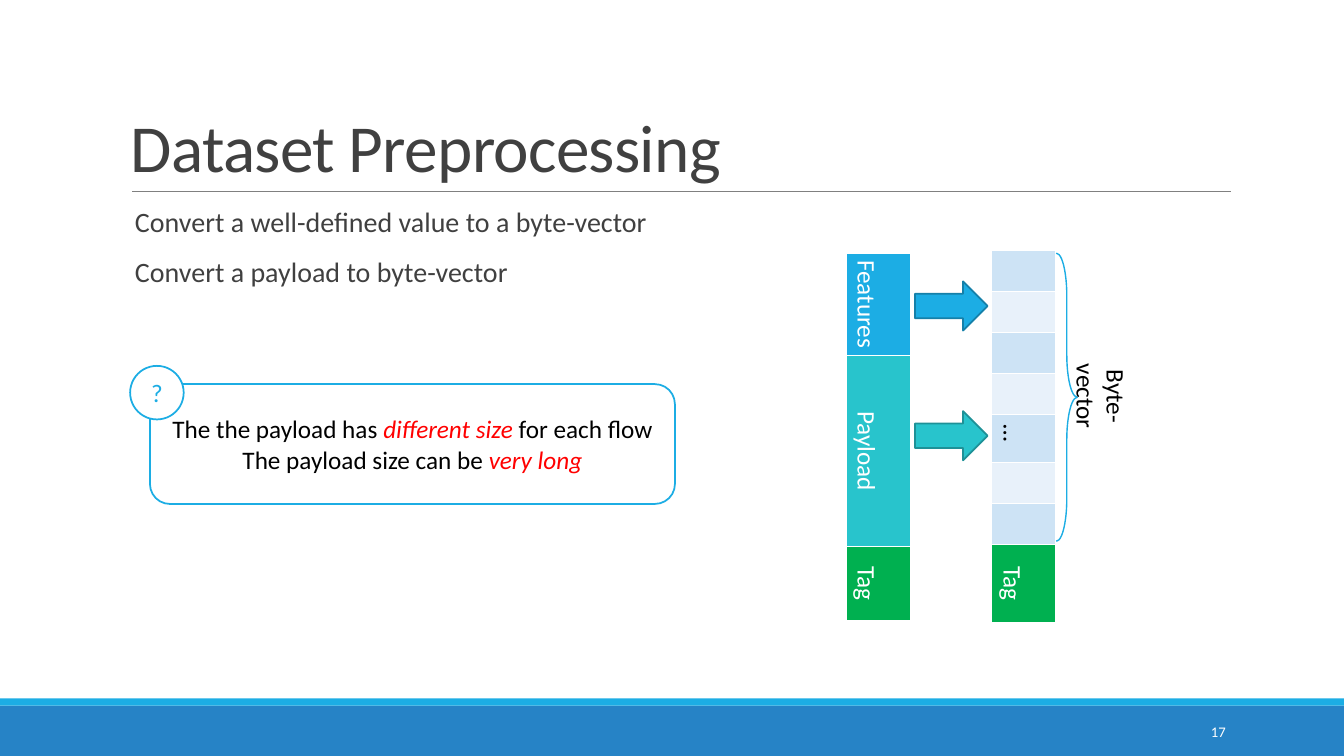
from dataclasses import dataclass
from lxml import etree
from pptx import Presentation
from pptx.dml.color import RGBColor
from pptx.enum.shapes import MSO_CONNECTOR as Connector, MSO_SHAPE as Preset
from pptx.enum.text import MSO_ANCHOR as Anchor, MSO_AUTO_SIZE as AutoSize, PP_ALIGN as Align
from pptx.oxml.ns import qn
from pptx.util import Cm, Pt


@dataclass(frozen=True)
class Theme:
    font: str = "Calibri"
    white: str = "FFFFFF"
    black: str = "000000"
    ink: str = "404040"
    grey: str = "808080"
    red: str = "FF0000"
    blue: str = "1CADE4"
    blue_edge: str = "1580A9"
    navy: str = "2683C6"
    teal: str = "28C4CC"
    teal_edge: str = "1E9197"
    green: str = "00B050"
    bands: tuple = ("CDE3F5", "E8F1FA")
    title_size: float = 48
    body_size: float = 20
    label_size: float = 18
    number_size: float = 10.5


THEME = Theme()

# Content; lengths in centimetres
TITLE = "Dataset Preprocessing"
POINTS = ["Convert a well-defined value to a byte-vector",
          "Convert a payload to byte-vector"]
RED_ITALIC = {"color": THEME.red, "italic": True}
CALLOUT = [
    [("The the payload has ", {}), ("different size", RED_ITALIC), (" for each flow", {})],
    [("The payload size can be ", {}), ("very long", RED_ITALIC)],
]
RECORD = [("Features", 2.57, THEME.blue), ("Payload", 4.83, THEME.teal), ("Tag", 1.85, THEME.green)]
VECTOR_BYTES = ["", "", "", "", "…", "", ""]
BYTE_HEIGHT, DOTS_HEIGHT, TAG_HEIGHT = 1.03, 1.22, 1.96
ARROWS = [(10.36, THEME.teal, THEME.teal_edge), (7.09, THEME.blue, THEME.blue_edge)]
SLIDE_WIDTH, SLIDE_HEIGHT = 33.87, 19.05
COLUMN_WIDTH = 1.6


def rgb(color):
    return RGBColor.from_string(color)


def write_text(frame, paragraphs, size=THEME.label_size, color=THEME.black, align=Align.LEFT,
               anchor=Anchor.MIDDLE, line_spacing=None, before=None, after=None,
               margins=None, vertical=False, tracking=None, hanging=None):
    """Fill a text frame; a paragraph is a string or a list of (text, format) runs."""
    frame.word_wrap = True
    frame.vertical_anchor = anchor
    if margins:
        frame.margin_left, frame.margin_top, frame.margin_right, frame.margin_bottom = map(Cm, margins)
    if vertical:
        frame._txBody.bodyPr.set("vert", "vert")
    for index, content in enumerate(paragraphs):
        paragraph = frame.add_paragraph() if index else frame.paragraphs[0]
        paragraph.alignment = align
        if line_spacing:
            paragraph.line_spacing = line_spacing
        if before is not None:
            paragraph.space_before, paragraph.space_after = Pt(before), Pt(after)
        if hanging:
            properties = paragraph._p.get_or_add_pPr()
            properties.set("marL", str(Cm(hanging)))
            properties.set("indent", str(-Cm(hanging)))
            bullet_color = etree.SubElement(properties, qn("a:buClr"))
            etree.SubElement(bullet_color, qn("a:srgbClr"), val=THEME.blue)
            etree.SubElement(properties, qn("a:buChar"), char=" ")
        for text, style in [(content, {})] if isinstance(content, str) else content:
            run = paragraph.add_run()
            run.text = text
            run.font.name = THEME.font
            run.font.size = Pt(size)
            run.font.italic = style.get("italic", False)
            run.font.color.rgb = rgb(style.get("color", color))
            if tracking:
                run._r.get_or_add_rPr().set("spc", str(int(tracking * 100)))


def add_text(box, paragraphs, **style):
    textbox = slide.shapes.add_textbox(*map(Cm, box))
    write_text(textbox.text_frame, paragraphs, **style)
    return textbox


def add_preset(shapes, preset, box, fill=None, line=None, width=1.25):
    shape = shapes.add_shape(preset, *map(Cm, box))
    shape.shadow.inherit = False
    if fill:
        shape.fill.solid()
        shape.fill.fore_color.rgb = rgb(fill)
    else:
        shape.fill.background()
    if line:
        shape.line.color.rgb = rgb(line)
        shape.line.width = Pt(width)
    else:
        shape.line.fill.background()
    return shape


def add_column(left, top, rows, align_of, margins):
    """Add a one-column table of (text, height, fill, text colour) rows."""
    height = sum(row[1] for row in rows)
    table = slide.shapes.add_table(len(rows), 1, *map(Cm, (left, top, COLUMN_WIDTH, height))).table
    table.first_row = table.horz_banding = False
    table.columns[0].width = Cm(COLUMN_WIDTH)
    for index, (text, row_height, fill, color) in enumerate(rows):
        table.rows[index].height = Cm(row_height)
        cell = table.cell(index, 0)
        properties = cell._tc.get_or_add_tcPr()
        for side in ("lnL", "lnR", "lnT", "lnB"):
            border = etree.SubElement(properties, qn(f"a:{side}"), w=str(Pt(1)))
            border_fill = etree.SubElement(border, qn("a:solidFill"))
            etree.SubElement(border_fill, qn("a:srgbClr"), val=THEME.white)
        cell.fill.solid()
        cell.fill.fore_color.rgb = rgb(fill)
        cell.margin_left, cell.margin_top, cell.margin_right, cell.margin_bottom = map(Cm, margins)
        if text:
            write_text(cell.text_frame, [text], color=color, align=align_of(text))
            cell.vertical_anchor = Anchor.MIDDLE
            properties.set("vert", "vert")
        else:
            cell.text_frame.paragraphs[0].font.size = Pt(THEME.number_size)


presentation = Presentation()
presentation.slide_width, presentation.slide_height = Cm(SLIDE_WIDTH), Cm(SLIDE_HEIGHT)
slide = presentation.slides.add_slide(presentation.slide_layouts[6])

# Footer bands and title rule
add_preset(slide.shapes, Preset.RECTANGLE, (0, 17.78, SLIDE_WIDTH, 1.27), THEME.navy)
add_preset(slide.shapes, Preset.RECTANGLE, (0, 17.6, SLIDE_WIDTH, 0.18), THEME.blue)
rule = slide.shapes.add_connector(Connector.STRAIGHT, Cm(3.33), Cm(4.83), Cm(31.01), Cm(4.83))
rule.line.color.rgb = rgb(THEME.grey)
rule.line.width = Pt(0.5)
etree.SubElement(rule._element.spPr, qn("a:effectLst"))

# Title and body
add_text((3.05, 0.79, 27.94, 4.04), [TITLE], size=THEME.title_size, color=THEME.ink,
         anchor=Anchor.BOTTOM, line_spacing=0.85, tracking=-0.5)
add_text((3.05, 5.13, 13.72, 11.18), POINTS, size=THEME.body_size, color=THEME.ink,
         anchor=Anchor.TOP, line_spacing=0.9, before=12, after=2,
         margins=(0, 0.13, 0, 0.13), hanging=0.25)

# Record and byte-vector columns
add_column(21.34, 6.38, [(*row, THEME.white) for row in RECORD],
           lambda text: Align.CENTER, (0.1,) * 4)
vector_rows = [(text, DOTS_HEIGHT if text else BYTE_HEIGHT, THEME.bands[index % 2], THEME.black)
               for index, text in enumerate(VECTOR_BYTES)]
vector_rows.append(("Tag", TAG_HEIGHT, THEME.green, THEME.white))
add_column(24.99, 6.32, vector_rows,
           lambda text: Align.CENTER if text == "Tag" else Align.LEFT, (0.25, 0.13, 0.25, 0.13))

# Brace with its label
brace = add_preset(slide.shapes, Preset.RIGHT_BRACE, (26.62, 6.38, 0.53, 7.26),
                   line=THEME.blue, width=1)
brace.adjustments[0], brace.adjustments[1] = 2.015, 0.5
label = add_text((27.13, 8.26, 1.27, 3.45), ["Byte-vector"], align=Align.CENTER, vertical=True)
label.text_frame.auto_size = AutoSize.SHAPE_TO_FIT_TEXT

# Arrows between the columns
for top, fill, edge in ARROWS:
    add_preset(slide.shapes, Preset.RIGHT_ARROW, (23.06, top, 1.83, 1.24), fill, edge)

# Question callout
callout = slide.shapes.add_group_shape()
panel = add_preset(callout.shapes, Preset.ROUNDED_RECTANGLE, (3.78, 9.68, 13.23, 3.02),
                   THEME.white, THEME.blue)
write_text(panel.text_frame, CALLOUT, align=Align.CENTER)
badge = add_preset(callout.shapes, Preset.OVAL, (3.28, 9.22, 1.35, 1.35), THEME.white, THEME.blue)
write_text(badge.text_frame, ["?"], color=THEME.blue, align=Align.CENTER)

# Slide number
add_text((27.51, 17.93, 3.63, 1.02), ["17"], size=THEME.number_size, color=THEME.white,
         align=Align.RIGHT)

presentation.save("out.pptx")
